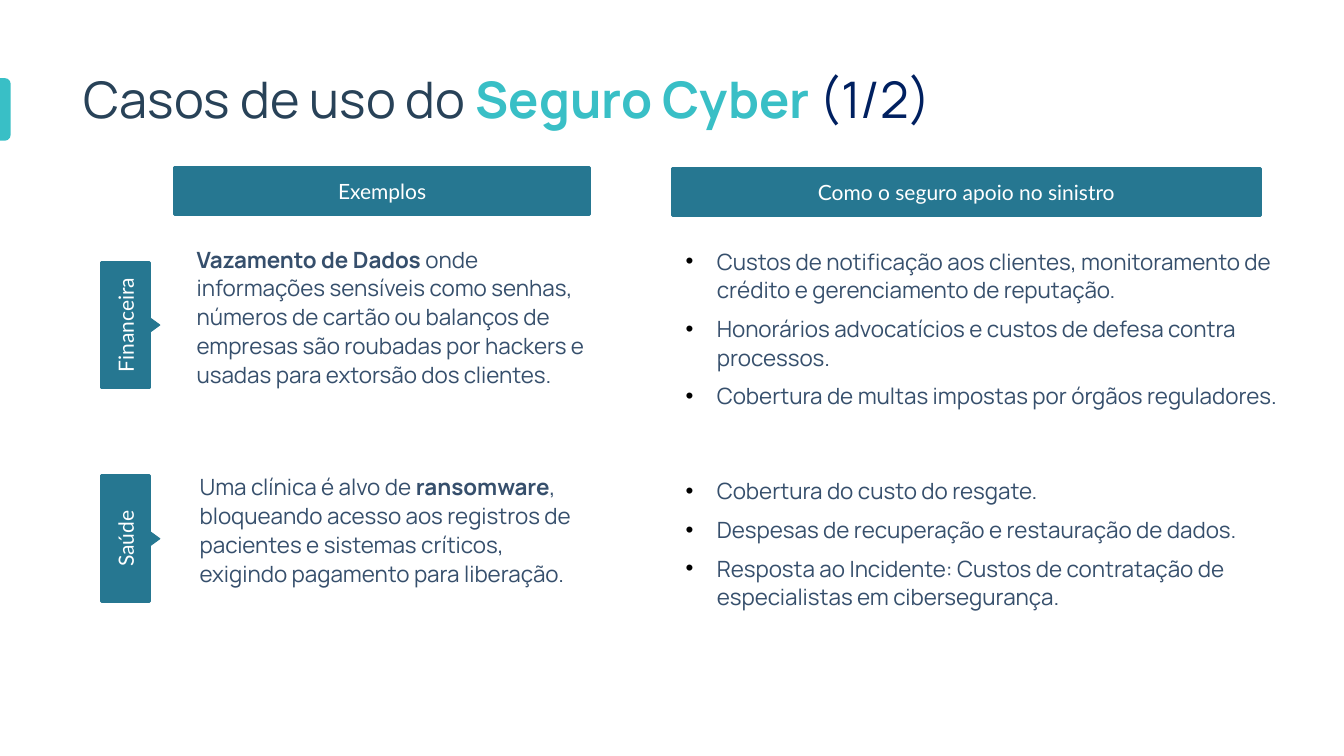
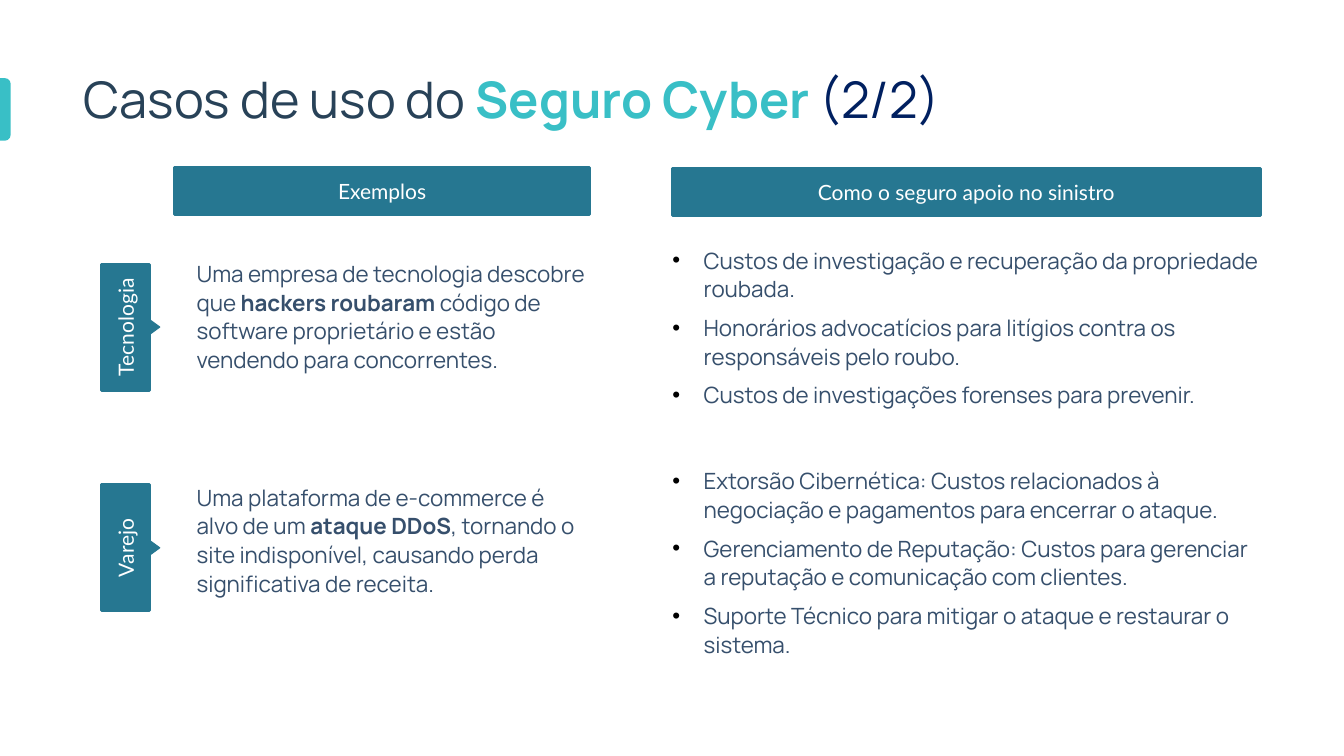
import pptx
import pptx.util
import pptx.dml.color
import pptx.enum.shapes
import pptx.enum.text
import pptx.oxml.ns
import lxml.etree

Inches = pptx.util.Inches
Pt = pptx.util.Pt
SHAPES = pptx.enum.shapes.MSO_SHAPE
ALIGN = pptx.enum.text.PP_ALIGN
ANCHOR = pptx.enum.text.MSO_ANCHOR

COLORS = {
    "accent": "39BFC6",
    "band": "267791",
    "title": "284258",
    "number": "002060",
    "body": "364F6C",
    "bullet": "000000",
    "white": "FFFFFF",
}
TITLE_FONT = "Manrope"
LABEL_FONT = "Lato"
TITLE_BOX = (0.83, 0.74, 11.67, 0.67)
HEADERS = [
    ("Exemplos", (1.73, 1.66, 4.12, 0.47)),
    ("Como o seguro apoio no sinistro", (6.67, 1.67, 5.83, 0.47)),
]
TAB_X, TAB_LENGTH, TAB_DEPTH = 1.245, 1.25, 0.47
POINTER_X, POINTER_WIDTH, POINTER_HEIGHT = 1.53, 0.16, 0.11

CASES = [
    [
        {
            "label": "Financeira",
            "center": 3.225,
            "example_box": (1.95, 2.42, 3.91, 1.74),
            "example": [
                ("Vazamento de Dados ", True),
                ("onde informações sensíveis como senhas, números de cartão ou balanços de "
                 "empresas são roubadas por hackers e usadas para extorsão dos clientes.", False),
            ],
            "support_box": (6.8, 2.44, 6.03, 1.74),
            "support": [
                "Custos de notificação aos clientes, monitoramento de crédito e gerenciamento de reputação.",
                "Honorários advocatícios e custos de defesa contra processos.",
                "Cobertura de multas impostas por órgãos reguladores.",
            ],
        },
        {
            "label": "Saúde",
            "center": 5.345,
            "example_box": (1.98, 4.68, 3.91, 1.74),
            "example": [
                ("Uma clínica é alvo de ", False),
                ("ransomware", True),
                (", bloqueando acesso aos registros de pacientes e sistemas críticos, "
                 "exigindo pagamento para liberação.", False),
            ],
            "support_box": (6.8, 4.72, 6.03, 1.74),
            "support": [
                "Cobertura do custo do resgate.",
                "Despesas de recuperação e restauração de dados.",
                "Resposta ao Incidente: Custos de contratação de especialistas em cibersegurança.",
            ],
        },
    ],
    [
        {
            "label": "Tecnologia",
            "center": 3.245,
            "example_box": (1.95, 2.56, 3.91, 1.49),
            "example": [
                ("Uma empresa de tecnologia descobre que ", False),
                ("hackers roubaram ", True),
                ("código de software proprietário e estão vendendo para concorrentes.", False),
            ],
            "support_box": (6.67, 2.43, 5.83, 1.49),
            "support": [
                "Custos de investigação e recuperação da propriedade roubada.",
                "Honorários advocatícios para litígios contra os responsáveis pelo roubo.",
                "Custos de investigações forenses para prevenir.",
            ],
        },
        {
            "label": "Varejo",
            "center": 5.435,
            "example_box": (1.95, 4.78, 3.91, 1.49),
            "example": [
                ("Uma plataforma de e-commerce é alvo de um ", False),
                ("ataque DDoS", True),
                (", tornando o site indisponível, causando perda significativa de receita.", False),
            ],
            "support_box": (6.67, 4.62, 5.83, 2.28),
            "support": [
                "Extorsão Cibernética: Custos relacionados à negociação e pagamentos para encerrar o ataque.",
                "Gerenciamento de Reputação: Custos para gerenciar a reputação e comunicação com clientes.",
                "Suporte Técnico para mitigar o ataque e restaurar o sistema.",
            ],
        },
    ],
]


def rgb(name):
    return pptx.dml.color.RGBColor.from_string(COLORS[name])


def inches(box):
    return [Inches(length) for length in box]


def centered(x, y, width, height):
    return x - width / 2, y - height / 2, width, height


def add_span(para, text, size, color, bold=False, font=TITLE_FONT):
    span = para.add_run()
    span.text = text
    span.font.name = font
    span.font.size = Pt(size)
    span.font.bold = bold
    span.font.color.rgb = rgb(color)


def prepare_frame(frame):
    frame.word_wrap = True
    frame.auto_size = pptx.enum.text.MSO_AUTO_SIZE.NONE
    frame.vertical_anchor = ANCHOR.TOP
    frame.margin_left = frame.margin_top = frame.margin_right = frame.margin_bottom = 0


def add_block(shapes, kind, box, color, line_width=None, rotation=0):
    block = shapes.add_shape(kind, *inches(box))
    block.shadow.inherit = False
    block.rotation = rotation
    block.fill.solid()
    block.fill.fore_color.rgb = rgb(color)
    if line_width is None:
        block.line.fill.background()
    else:
        block.line.color.rgb = rgb(color)
        block.line.width = Pt(line_width)
    return block


def add_label(shapes, text, box, rotation=0):
    label = add_block(shapes, SHAPES.RECTANGLE, box, "band", 2, rotation)
    label.text_frame.word_wrap = True
    label.text_frame.vertical_anchor = ANCHOR.MIDDLE
    para = label.text_frame.paragraphs[0]
    para.alignment = ALIGN.CENTER
    add_span(para, text, 15, "white", font=LABEL_FONT)


def add_row_tab(page, text, center):
    group = page.shapes.add_group_shape()
    add_label(group.shapes, text, centered(TAB_X, center, TAB_LENGTH, TAB_DEPTH), 270)
    pointer_box = centered(POINTER_X, center, POINTER_WIDTH, POINTER_HEIGHT)
    add_block(group.shapes, SHAPES.ISOSCELES_TRIANGLE, pointer_box, "band", 0.75, 90)


def set_bullet(para):
    qn = pptx.oxml.ns.qn
    properties = para._p.get_or_add_pPr()
    properties.set("marL", str(Inches(0.31)))
    properties.set("indent", str(-Inches(0.31)))
    color = lxml.etree.SubElement(properties, qn("a:buClr"))
    lxml.etree.SubElement(color, qn("a:srgbClr"), val=COLORS["bullet"])
    lxml.etree.SubElement(properties, qn("a:buFont"), typeface="Arial")
    lxml.etree.SubElement(properties, qn("a:buChar"), char="•")


def add_body(page, box, paragraphs, bulleted=False):
    frame = page.shapes.add_textbox(*inches(box)).text_frame
    prepare_frame(frame)
    for index, spans in enumerate(paragraphs):
        para = frame.add_paragraph() if index else frame.paragraphs[0]
        if bulleted:
            set_bullet(para)
        para.line_spacing = 1.07
        para.space_before = Pt(7 if index else 0)
        for text, bold in spans:
            add_span(para, text, 16, "body", bold)


def add_title(page, number):
    title = page.shapes.title
    title.left, title.top, title.width, title.height = inches(TITLE_BOX)
    prepare_frame(title.text_frame)
    para = title.text_frame.paragraphs[0]
    para.alignment = ALIGN.LEFT
    para.line_spacing = 0.9
    add_span(para, "Casos de uso do ", 36, "title")
    add_span(para, "Seguro Cyber ", 36, "accent", True)
    add_span(para, number, 36, "number")


def add_frame(page, number):
    marker = add_block(page.shapes, SHAPES.ROUND_2_SAME_RECTANGLE,
                       (-0.26, 1.03, 0.62, 0.11), "accent", rotation=90)
    marker.adjustments[0] = 0.5
    add_title(page, number)
    for text, box in HEADERS:
        add_label(page.shapes, text, box)


def add_case(page, case):
    add_row_tab(page, case["label"], case["center"])
    add_body(page, case["example_box"], [case["example"]])
    support = [[(text, False)] for text in case["support"]]
    add_body(page, case["support_box"], support, bulleted=True)


def main():
    deck = pptx.Presentation()
    deck.slide_width, deck.slide_height = Inches(13.33), Inches(7.5)
    title_only = deck.slide_layouts[5]
    for number, cases in enumerate(CASES, start=1):
        page = deck.slides.add_slide(title_only)
        add_frame(page, f"({number}/{len(CASES)})")
        for case in cases:
            add_case(page, case)
    deck.save("out.pptx")


if __name__ == "__main__":
    main()
